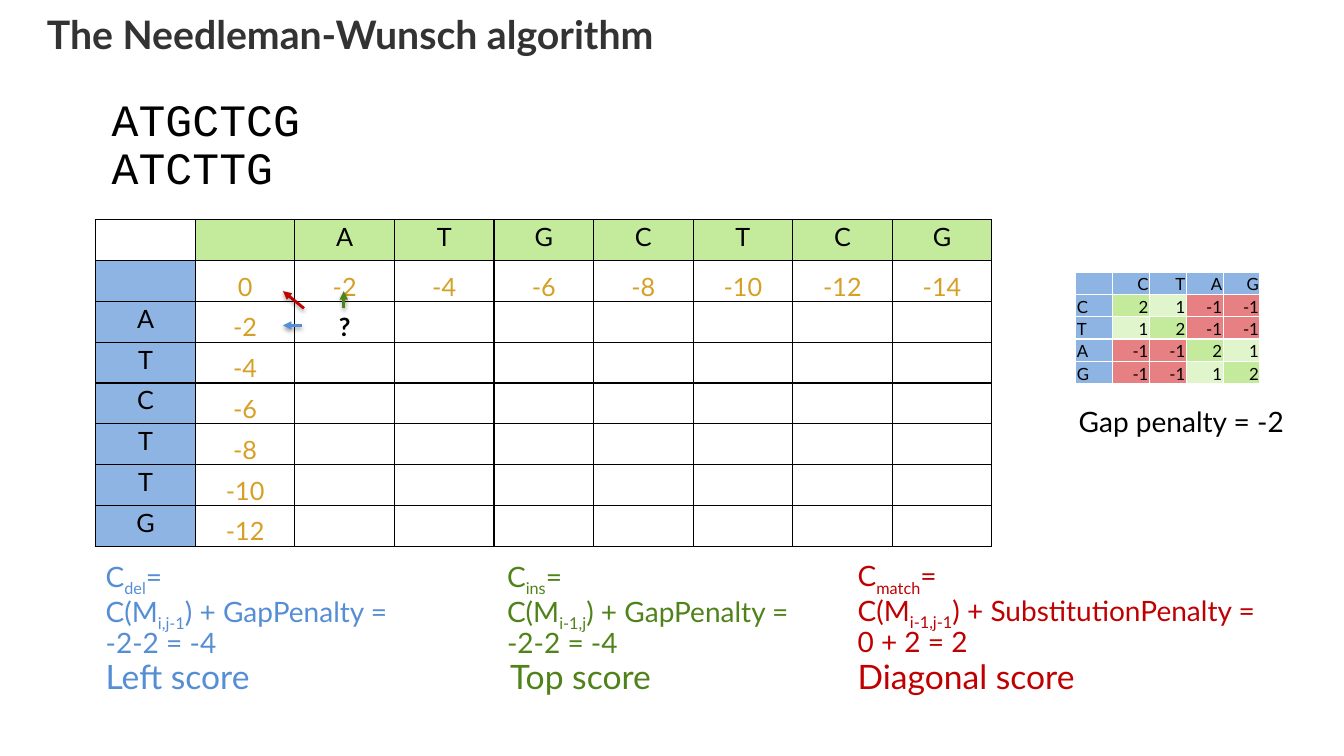
from lxml import etree
from pptx import Presentation
from pptx import util as u
from pptx.dml.color import RGBColor
from pptx.enum import shapes, text
from pptx.oxml import parse_xml
from pptx.oxml.ns import qn

BLACK = RGBColor(0x00, 0x00, 0x00)
WHITE = RGBColor(0xFF, 0xFF, 0xFF)
CHARCOAL = RGBColor(0x33, 0x33, 0x33)
GOLD = RGBColor(0xD6, 0xA0, 0x26)
LEFT_BLUE = RGBColor(0x55, 0x8E, 0xD5)
TOP_GREEN = RGBColor(0x4F, 0x83, 0x1A)
DIAGONAL_RED = RGBColor(0xC0, 0x00, 0x00)
HEADER_BLUE = RGBColor(0x8E, 0xB4, 0xE3)
HEADER_GREEN = RGBColor(0xC3, 0xEB, 0x9B)
PALE_GREEN = RGBColor(0xE1, 0xF5, 0xCD)
MISMATCH_RED = RGBColor(0xE7, 0x80, 0x82)

DRAWING = 'xmlns:a="http://schemas.openxmlformats.org/drawingml/2006/main"'
LEFT, TOP = 0.95, 2.18
COLUMN, ROW = 8.89 / 9, 3.24 / 8

ACROSS, DOWN = "ATGCTCG", "ATCTTG"
BASES = "CTAG"
GAP = -2
SCORE_FILLS = {2: HEADER_GREEN, 1: PALE_GREEN, -1: MISMATCH_RED}
CENTER, RIGHT = text.PP_ALIGN.CENTER, text.PP_ALIGN.RIGHT


def point(column, row):
    return u.Inches(LEFT + column * COLUMN), u.Inches(TOP + row * ROW)


def area(column, row, columns, rows):
    return *point(column, row), u.Inches(columns * COLUMN), u.Inches(rows * ROW)


def write(frame, content, size=18, color=BLACK, font="Lato", bold=False, align=text.PP_ALIGN.LEFT):
    """Write lines of text; every second piece between bars is a subscript."""
    for number, line in enumerate(content.split("\n")):
        paragraph = frame.add_paragraph() if number else frame.paragraphs[0]
        paragraph.alignment = align
        paragraph.line_spacing = 0.9
        if not line:
            ending = etree.SubElement(paragraph._p, qn("a:endParaRPr"))
            ending.set("sz", str(size * 100))
            continue
        for piece_number, piece in enumerate(line.split("|")):
            run = paragraph.add_run()
            run.text = piece
            run.font.name = font
            run.font.size = u.Pt(size)
            run.font.bold = bold
            run.font.color.rgb = color
            if piece_number % 2:
                run.font._element.set("baseline", "-25000")


def add_text(slide, place, content, wrap=True, **style):
    frame = slide.shapes.add_textbox(*area(*place)).text_frame
    frame.word_wrap = wrap
    write(frame, content, **style)


def add_grid(slide, place, rows, columns):
    table = slide.shapes.add_table(rows, columns, *area(*place)).table
    table.first_row = False
    table.horz_banding = False
    return table


def fill_cell(cell, content, fill, border, tight=False, **style):
    cell.fill.solid()
    cell.fill.fore_color.rgb = fill
    if tight:
        cell.vertical_anchor = text.MSO_ANCHOR.BOTTOM
        cell.margin_left = cell.margin_right = cell.margin_top = u.Inches(0.01)
        cell.margin_bottom = 0
    for position, side in enumerate(("lnL", "lnR", "lnT", "lnB")):
        cell._tc.tcPr.insert(position, parse_xml(
            f'<a:{side} {DRAWING} w="12700"><a:solidFill><a:srgbClr val="{border}"/>'
            f'</a:solidFill></a:{side}>'))
    write(cell.text_frame, content, **style)


def add_alignment_matrix(slide):
    rows, columns = len(DOWN) + 2, len(ACROSS) + 2
    table = add_grid(slide, (0, 0, columns, rows), rows, columns)
    for row in range(rows):
        for column in range(columns):
            content, fill, color = "", WHITE, BLACK
            inside = row > 0 and column > 0
            unknown = (row, column) == (2, 2)
            if row == 0 and column > 0:
                content, fill = " "[1:] if column == 1 else ACROSS[column - 2], HEADER_GREEN
            elif column == 0 and row > 0:
                content, fill = "" if row == 1 else DOWN[row - 2], HEADER_BLUE
            elif unknown:
                content = "?"
            elif inside and 1 in (row, column):
                content, color = str(GAP * (row + column - 2)), GOLD
            fill_cell(table.cell(row, column), content, fill, BLACK, tight=inside,
                      color=color, bold=unknown, align=CENTER)


def substitution_score(first, second):
    if first == second:
        return 2
    return 1 if {first, second} in ({"C", "T"}, {"A", "G"}) else -1


def add_substitution_matrix(slide):
    labels = ["", *BASES]
    table = add_grid(slide, (9.84, 1.28, 1.85, 2.74), len(labels), len(labels))
    for row, first in enumerate(labels):
        for column, second in enumerate(labels):
            content, fill = first + second, HEADER_BLUE
            if first and second:
                score = substitution_score(first, second)
                content, fill = str(score), SCORE_FILLS[score]
            fill_cell(table.cell(row, column), content, fill, WHITE, tight=True,
                      size=12, align=RIGHT if column else text.PP_ALIGN.LEFT)


def add_arrow(slide, start, end, color):
    arrow = slide.shapes.add_connector(shapes.MSO_CONNECTOR.STRAIGHT, *point(*start), *point(*end))
    arrow.line.color.rgb = color
    arrow.line.width = u.Pt(2)
    etree.SubElement(arrow.line._get_or_add_ln(), qn("a:tailEnd"), type="triangle")
    arrow._element.spPr.append(parse_xml(
        f'<a:effectLst {DRAWING}><a:outerShdw blurRad="40000" dist="20000" dir="5400000" '
        'rotWithShape="0"><a:srgbClr val="000000"><a:alpha val="38000"/></a:srgbClr>'
        '</a:outerShdw></a:effectLst>'))


def add_title(slide, content):
    title = slide.shapes.title
    title.left, title.top, title.width, title.height = area(-0.49, -4.99, 11.42, 2.22)
    frame = title.text_frame
    frame.margin_left = frame.margin_right = frame.margin_top = frame.margin_bottom = 0
    frame.vertical_anchor = text.MSO_ANCHOR.TOP
    write(frame, content, size=28, color=CHARCOAL, bold=True)


def main():
    presentation = Presentation()
    presentation.slide_width, presentation.slide_height = u.Inches(13.33), u.Inches(7.5)
    slide = presentation.slides.add_slide(presentation.slide_layouts[5])
    add_title(slide, "The Needleman-Wunsch algorithm")
    add_alignment_matrix(slide)
    add_text(slide, (0.06, -3.11, 2.12, 2.67), f"{ACROSS}\n{DOWN}", wrap=False,
             size=32, font="Courier New")
    add_substitution_matrix(slide)
    add_text(slide, (9.77, 4.49, 2.34, 0.99), f"Gap penalty = {GAP}", wrap=False, size=20)

    scores = (
        (7.55, 8.2, 4.42, 7.55, "Diagonal score", DIAGONAL_RED,
         "C|match|=\nC(M|i-1,j-1|) + SubstitutionPenalty =\n0 + 2 = 2"),
        (4.03, 8.22, 3.27, 4.06, "Top score", TOP_GREEN,
         "C|ins|=\nC(M|i-1,j|) + GapPenalty =\n-2-2 = -4"),
        (0, 8.22, 3.21, 0, "Left score", LEFT_BLUE,
         "C|del|=\nC(M|i,j-1|) + GapPenalty =\n-2-2 = -4"),
    )
    for left, top, width, name_left, name, color, formula in scores:
        add_text(slide, (left, top, width, 2.49), formula, size=20, color=color)
        add_text(slide, (name_left, 10.67, width, 1.14), name, size=24, color=color)

    add_arrow(slide, (2.07, 2.59), (1.88, 2.59), LEFT_BLUE)
    add_arrow(slide, (2.49, 2.17), (2.49, 1.75), TOP_GREEN)
    add_arrow(slide, (2.09, 2.17), (1.88, 1.75), DIAGONAL_RED)
    presentation.save("out.pptx")


if __name__ == "__main__":
    main()
